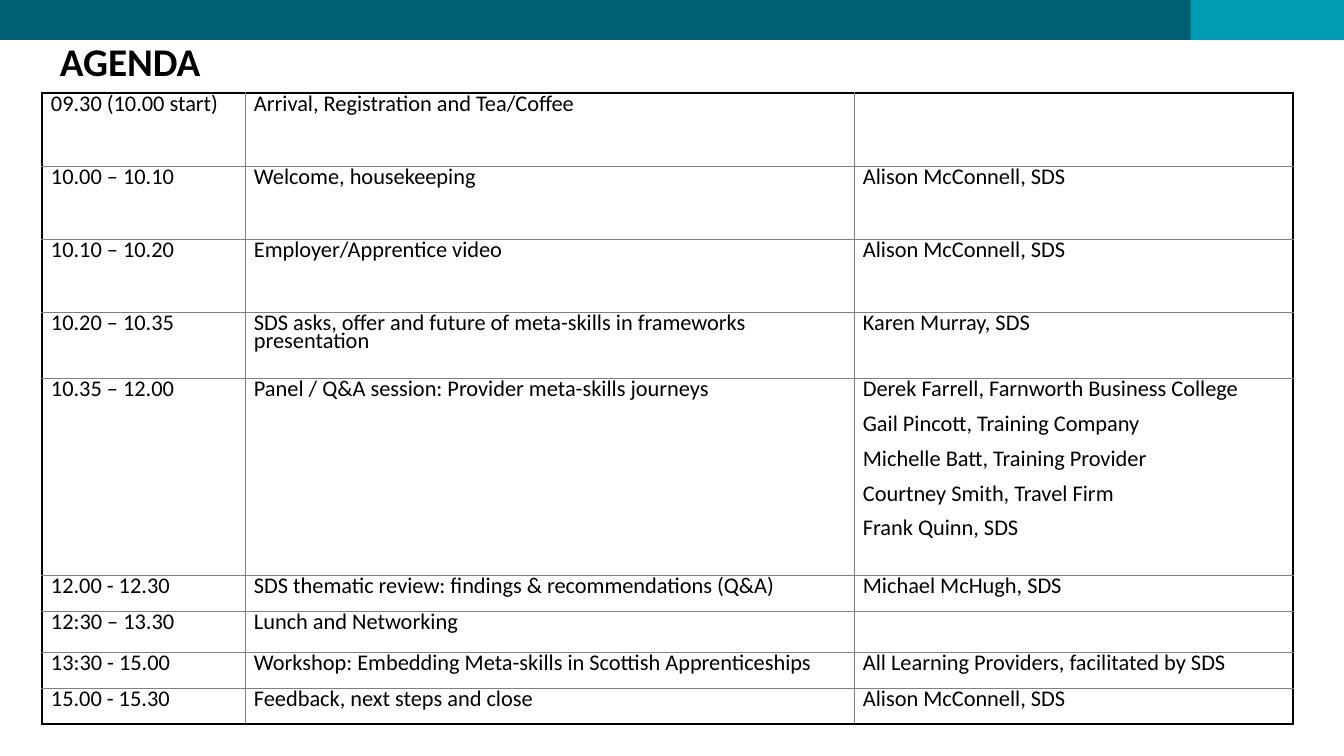
from dataclasses import dataclass

from lxml import etree
from pptx import Presentation
from pptx.dml.color import RGBColor
from pptx.enum.shapes import MSO_SHAPE
from pptx.enum.text import MSO_ANCHOR
from pptx.oxml.ns import qn
from pptx.util import Emu, Pt

RECTANGLE = MSO_SHAPE.RECTANGLE
TOP = MSO_ANCHOR.TOP
EMU_PER_PX = 914400 / 100.8


@dataclass(frozen=True)
class Theme:
    font: str = "Calibri"
    ink: str = "000000"
    grid: str = "808080"
    band: str = "005F72"
    accent: str = "009DB5"
    title_size: int = 28
    body_size: int = 16
    line_spacing: float = 12.8
    para_gap: int = 6
    frame_width: float = 1.5
    grid_width: float = 0.5


THEME = Theme()
PAGE_SIZE = (1344, 756)
BAND_BOX = (0, 0, 1344, 40)
TITLE_BOX = (50, 38, 1202, 111)
AGENDA_BOX = (42, 93, 1251, 631)
ACCENT_WIDTH = 153
COLUMN_WIDTHS = (203, 609, 439)
CELL_MARGINS = {"margin_left": 9, "margin_top": 7, "margin_right": 4, "margin_bottom": 7}

# Row height, time, session, speakers
AGENDA = [
    (73, "09.30 (10.00 start)", "Arrival, Registration and Tea/Coffee", []),
    (73, "10.00 – 10.10", "Welcome, housekeeping", ["Alison McConnell, SDS"]),
    (73, "10.10 – 10.20", "Employer/Apprentice video", ["Alison McConnell, SDS"]),
    (66, "10.20 – 10.35",
     "SDS asks, offer and future of meta-skills in frameworks presentation",
     ["Karen Murray, SDS"]),
    (197, "10.35 – 12.00", "Panel / Q&A session: Provider meta-skills journeys",
     ["Derek Farrell, Farnworth Business College",
      "Gail Pincott, Training Company",
      "Michelle Batt, Training Provider",
      "Courtney Smith, Travel Firm",
      "Frank Quinn, SDS"]),
    (36, "12.00 - 12.30", "SDS thematic review: findings & recommendations (Q&A)",
     ["Michael McHugh, SDS"]),
    (41, "12:30 – 13.30", "Lunch and Networking", []),
    (36, "13:30 - 15.00", "Workshop: Embedding Meta-skills in Scottish Apprenticeships",
     ["All Learning Providers, facilitated by SDS"]),
    (36, "15.00 - 15.30", "Feedback, next steps and close", ["Alison McConnell, SDS"]),
]


def px(length):
    return Emu(round(length * EMU_PER_PX))


def set_values(target, values):
    for name, value in values.items():
        setattr(target, name, value)


def style_font(font, size, bold=False):
    set_values(font, {"name": THEME.font, "size": Pt(size), "bold": bold})
    font.color.rgb = RGBColor.from_string(THEME.ink)


def add_band(page, box):
    """Draw the top band, with its accent block at the right end."""
    left, top, width, height = box
    split = width - ACCENT_WIDTH
    for start, length, color in ((left, split, THEME.band),
                                 (left + split, ACCENT_WIDTH, THEME.accent)):
        block = page.shapes.add_shape(RECTANGLE, px(start), px(top), px(length), px(height))
        block.shadow.inherit = False
        block.fill.solid()
        block.fill.fore_color.rgb = RGBColor.from_string(color)
        block.line.fill.background()


def add_title(page, box, text):
    frame = page.shapes.add_textbox(*map(px, box)).text_frame
    set_values(frame, {"word_wrap": True, "vertical_anchor": TOP})
    para = frame.paragraphs[0]
    para.text = text
    para.line_spacing = 0.9
    style_font(para.font, THEME.title_size, bold=True)


def set_borders(cell, outer_sides):
    """Draw the four cell borders, heavier on the sides in outer_sides."""
    properties = cell._tc.get_or_add_tcPr()
    for side in "LRTB":
        outer = side in outer_sides
        width = THEME.frame_width if outer else THEME.grid_width
        line = etree.SubElement(properties, qn(f"a:ln{side}"), w=str(Pt(width)))
        fill = etree.SubElement(line, qn("a:solidFill"))
        etree.SubElement(fill, qn("a:srgbClr"), val=THEME.ink if outer else THEME.grid)


def fill_cell(cell, lines):
    set_values(cell, {name: px(margin) for name, margin in CELL_MARGINS.items()})
    cell.vertical_anchor = TOP
    cell.text = "\n".join(lines)
    for index, para in enumerate(cell.text_frame.paragraphs):
        set_values(para, {
            "line_spacing": Pt(THEME.line_spacing),
            "space_before": Pt(THEME.para_gap if index else 0),
            "space_after": Pt(THEME.para_gap),
        })
        style_font(para.font, THEME.body_size)


def add_agenda(page, box):
    last_row, last_column = len(AGENDA) - 1, len(COLUMN_WIDTHS) - 1
    table = page.shapes.add_table(len(AGENDA), len(COLUMN_WIDTHS), *map(px, box)).table
    set_values(table, {"first_row": False, "horz_banding": False})
    for column, width in zip(table.columns, COLUMN_WIDTHS):
        column.width = px(width)
    for row, (height, time, session, speakers) in enumerate(AGENDA):
        table.rows[row].height = px(height)
        for column, lines in enumerate(([time], [session], speakers)):
            cell = table.cell(row, column)
            fill_cell(cell, lines)
            edges = {"L": column == 0, "R": column == last_column,
                     "T": row == 0, "B": row == last_row}
            set_borders(cell, [side for side, outer in edges.items() if outer])
            cell.fill.background()


def main():
    deck = Presentation()
    deck.slide_width, deck.slide_height = map(px, PAGE_SIZE)
    page = deck.slides.add_slide(deck.slide_layouts[6])
    add_band(page, BAND_BOX)
    add_title(page, TITLE_BOX, "AGENDA")
    add_agenda(page, AGENDA_BOX)
    deck.save("out.pptx")


if __name__ == "__main__":
    main()
